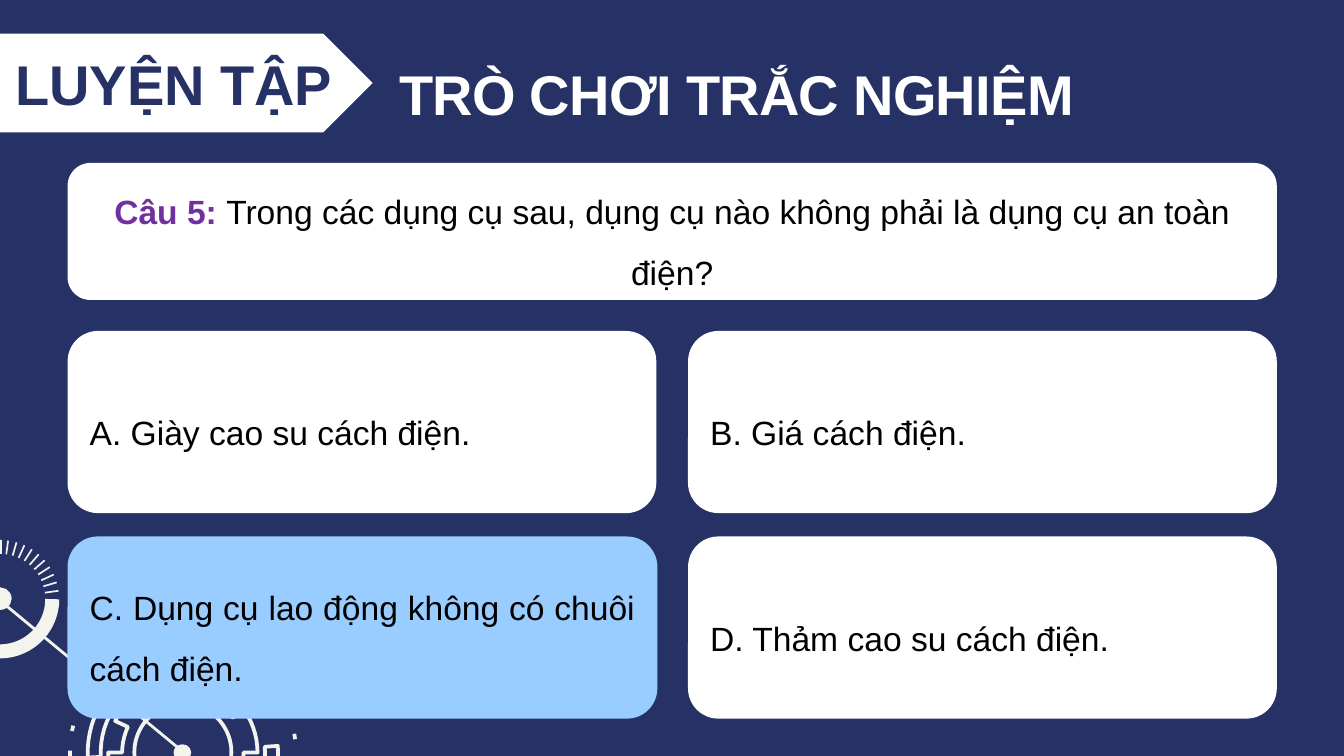
from math import cos, radians, sin

from lxml.etree import SubElement
from pptx import Presentation
from pptx.dml.color import RGBColor as RGB
from pptx.enum.shapes import MSO_CONNECTOR as LINK, MSO_SHAPE as KIND
from pptx.enum.text import MSO_ANCHOR as ANCHOR, MSO_AUTO_SIZE as FIT, PP_ALIGN as ALIGN
from pptx.oxml.ns import qn
from pptx.util import Pt

INK = {
    "navy": "263165",
    "white": "FFFFFF",
    "cream": "F3F4EE",
    "sky": "99CCFF",
    "plum": "7030A0",
    "black": "000000",
}

deck = Presentation()
deck.slide_width, deck.slide_height = Pt(720), Pt(405)
slide = deck.slides.add_slide(deck.slide_layouts[6])
slide.background.fill.solid()
slide.background.fill.fore_color.rgb = RGB.from_string(INK["navy"])
shapes = slide.shapes
cream = RGB.from_string(INK["cream"])


def write(text, para, size=18, ink="black", bold=False, track=0):
    run = para.add_run()
    run.text = text
    run.font.name = "Arial"
    run.font.size = Pt(size)
    run.font.bold = bold
    run.font.color.rgb = RGB.from_string(INK[ink])
    if track:
        run.font._element.set("spc", str(track))


def trace(hub, polar, width, close=False):
    dots = [
        (Pt(hub[0] + r * cos(radians(a))), Pt(hub[1] + r * sin(radians(a))))
        for r, a in polar
    ]
    pen = shapes.build_freeform(*dots[0])
    pen.add_line_segments(dots[1:], close=close)
    form = pen.convert_to_shape()
    form.shadow.inherit = False
    form.fill.background()
    form.line.color.rgb = cream
    form.line.width = Pt(width)


gear, dial = (98, 403.2), (0, 321)

teeth = []
for turn in range(-95, 265, 60):
    teeth += [(40, turn + step) for step in range(0, 36, 5)]
    teeth += [(32.5, turn + step) for step in range(35, 61, 5)]
trace(gear, teeth, 2, close=True)

for start in (-4, 177):
    span = range(start, start + 36, 5)
    band = [(51, a) for a in span] + [(44, a) for a in reversed(span)]
    trace(gear, band, 2, close=True)

for mid in (-8.2, 179.6, 192.4):
    trace(gear, [(60.5, mid - 1.4), (60.5, mid + 1.4)], 2)

trace(dial, [(28, a) for a in range(0, 273, 4)], 7.5)
for step in range(1, 11):
    trace(dial, [(24.3, -8.2 * step), (31.7, -8.2 * step)], 0.9)

for x, y, w, h, width, solid in (
    (72, 377, 52, 52, 2, False),
    (-5, 315.5, 10.5, 10.5, 1.5, True),
    (93.7, 399.5, 8, 7.5, 1.5, True),
):
    disc = shapes.add_shape(KIND.OVAL, Pt(x), Pt(y), Pt(w), Pt(h))
    disc.shadow.inherit = False
    disc.line.color.rgb = cream
    disc.line.width = Pt(width)
    if solid:
        disc.fill.solid()
        disc.fill.fore_color.rgb = cream
    else:
        disc.fill.background()

rod = shapes.add_connector(LINK.STRAIGHT, Pt(95), Pt(400.3), Pt(3.6), Pt(324.7))
rod.line.color.rgb = cream
rod.line.width = Pt(1.5)
SubElement(rod._element.spPr, qn("a:effectLst"))

title = shapes.add_textbox(Pt(212.4), Pt(27.7), Pt(364.3), Pt(40))
frame = title.text_frame
frame.word_wrap = True
frame.auto_size = FIT.SHAPE_TO_FIT_TEXT
frame.margin_left = frame.margin_right = frame.margin_top = frame.margin_bottom = 0
head = frame.paragraphs[0]
head.alignment = ALIGN.CENTER
head.line_spacing = Pt(40)
write("TRÒ CHƠI TRẮC NGHIỆM", head, size=30, ink="white", bold=True, track=-40)

panels = [
    (KIND.ROUNDED_RECTANGLE, 36.2, 87.3, 647.8, 73.4, "white", ALIGN.CENTER, 1.5, [
        ("Câu 5: ", {"ink": "plum", "bold": True}),
        ("Trong các dụng cụ sau, dụng cụ nào không phải là dụng cụ an toàn điện?", {}),
    ]),
    (KIND.PENTAGON, 0, 18, 199.6, 53, "white", ALIGN.CENTER, 1, [
        ("LUYỆN TẬP", {"size": 30, "ink": "navy", "bold": True}),
    ]),
]
picks = [
    ("A. Giày cao su cách điện.", "white", 315.4),
    ("B. Giá cách điện.", "white", 315.4),
    ("C. Dụng cụ lao động không có chuôi cách điện.", "sky", 316),
    ("D. Thảm cao su cách điện.", "white", 315.4),
]
for i, (text, fill, wide) in enumerate(picks):
    row, col = divmod(i, 2)
    panels.append((
        KIND.ROUNDED_RECTANGLE, 36.2 + 332.4 * col, 177.3 + 110.1 * row, wide, 97.6,
        fill, ALIGN.JUSTIFY, 1.5, [(text, {})],
    ))

for kind, x, y, w, h, fill, align, gap, runs in panels:
    panel = shapes.add_shape(kind, Pt(x), Pt(y), Pt(w), Pt(h))
    panel.shadow.inherit = False
    panel.fill.solid()
    panel.fill.fore_color.rgb = RGB.from_string(INK[fill])
    panel.line.fill.background()
    panel.text_frame.word_wrap = True
    panel.text_frame.vertical_anchor = ANCHOR.MIDDLE
    para = panel.text_frame.paragraphs[0]
    para.alignment = align
    para.line_spacing = gap
    for text, look in runs:
        write(text, para, **look)

deck.save("out.pptx")
